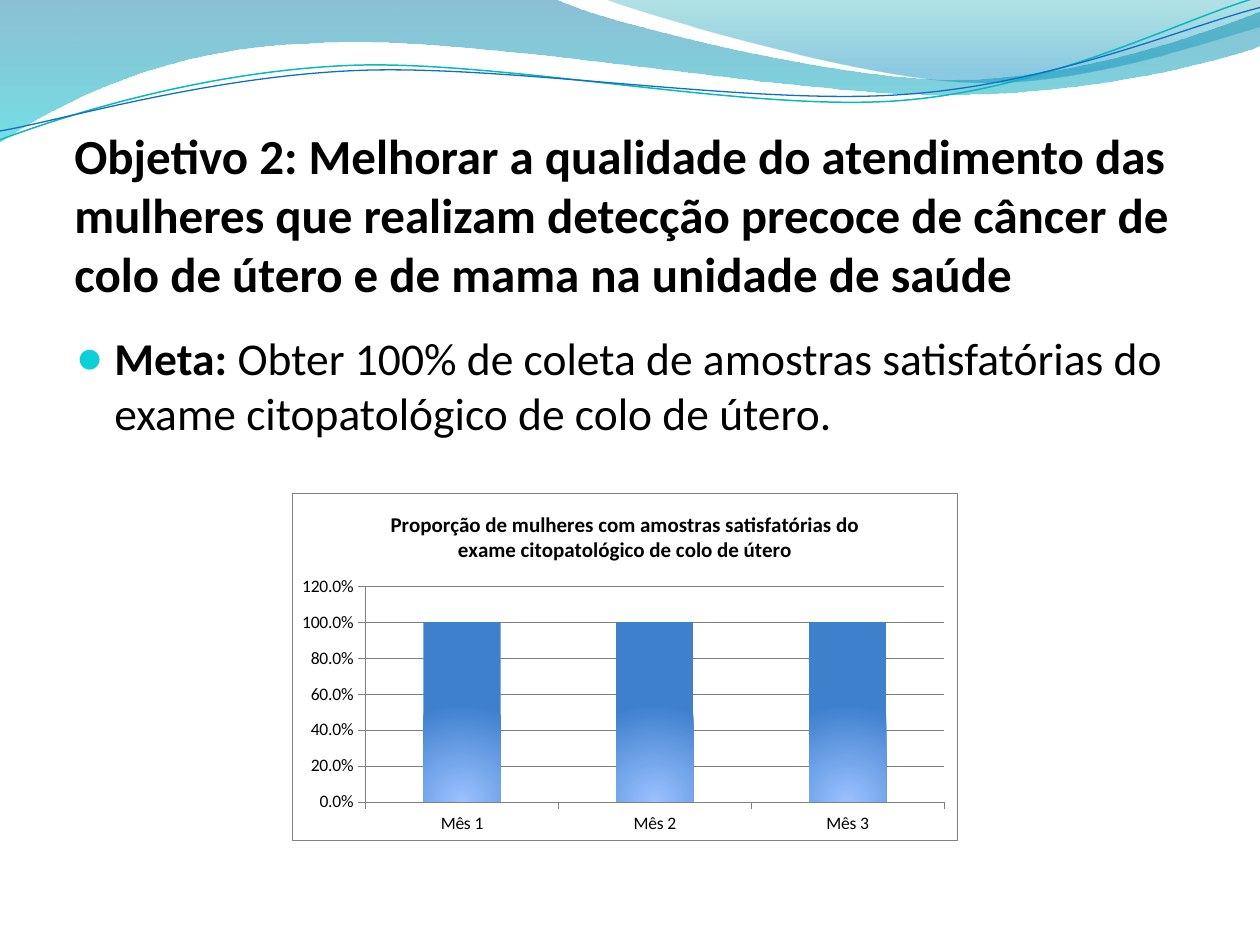
"""Build the slide on sample quality, with its wave header and column chart."""
import pptx
import pptx.chart.data
import pptx.dml.color
import pptx.enum.chart
import pptx.enum.text
import pptx.oxml
import pptx.oxml.ns
import pptx.util
from lxml import etree
from pptx.util import Inches

qn = pptx.oxml.ns.qn
Pt = pptx.util.Pt


def color(code):
    return pptx.dml.color.RGBColor.from_string(code)


def shade(fill, stops):
    fill.gradient()
    fill.gradient_angle = 270
    for stop, (place, code, alpha) in zip(fill.gradient_stops, stops):
        stop.position = place
        stop.color.rgb = color(code)
        if alpha < 100:
            tint = stop._gs.find(qn("a:srgbClr"))
            etree.SubElement(tint, qn("a:alpha"), val=str(alpha * 1000))


deck = pptx.Presentation()
deck.slide_width, deck.slide_height = Inches(10), Inches(7.5)
slide = deck.slides.add_slide(deck.slide_layouts[5])
slide.background.fill.solid()
slide.background.fill.fore_color.rgb = color("FFFFFF")

waves = [
    ("LCCLCCCL",
     [(0, 0), (4.4, -0.01), (4.76, 0.17), (6.64, 0.63), (7.58, 0.63),
      (8.53, 0.63), (9.58, 0.26), (10, 0.09), (10.01, 0.36),
      (9.83, 0.44), (8.7, 0.76), (7.46, 0.75), (6.22, 0.75), (3.82, 0.28),
      (2.57, 0.34), (1.29, 0.36), (0.46, 0.83), (-0.01, 1.13), (0, 0)],
     [(0, "0074A1", 45), (1, "00C6CF", 55)], None),
    ("CCLL",
     [(4.79, -0.01), (5.09, 0.11), (6.82, 0.62), (7.69, 0.65),
      (8.56, 0.69), (9.61, 0.32), (10, 0.21), (10, 0), (4.79, -0.01)],
     [(0, "00A1A9", 30), (0.8, "008BBF", 45)], None),
    ("CCC",
     [(0, 1.11), (0.48, 0.93), (1.58, 0.57), (2.77, 0.52), (3.95, 0.47),
      (5.93, 0.89), (7.13, 0.8), (8.33, 0.71), (9.38, 0.15), (9.98, -0.02)],
     None, ("0AB8BF", 0.85)),
    ("CCC",
     [(0, 1.04), (0.47, 0.96), (1.64, 0.61), (2.83, 0.56), (4.03, 0.51),
      (5.97, 0.84), (7.17, 0.75), (8.36, 0.67), (9.41, 0.21), (10, 0.06)],
     None, ("0F6FC6", 0.75)),
]
for kinds, points, stops, line in waves:
    spots = [(Inches(x), Inches(y)) for x, y in points]
    maker = slide.shapes.build_freeform(*spots[0])
    maker.add_line_segments(spots[1:], close=bool(stops))
    wave = maker.convert_to_shape()
    wave.shadow.inherit = False
    steps = iter(list(wave._element.iter(qn("a:lnTo"))))
    for kind in kinds:
        step = next(steps)
        if kind == "C":
            step.tag = qn("a:cubicBezTo")
            for extra in (next(steps), next(steps)):
                step.append(extra[0])
                extra.getparent().remove(extra)
    if stops:
        shade(wave.fill, stops)
        wave.line.fill.background()
    else:
        wave.fill.background()
        wave.line.color.rgb = color(line[0])
        wave.line.width = Pt(line[1])

title = slide.shapes.title
slide.shapes._spTree.append(title._element)
title.left, title.top = Inches(0.59), Inches(1.15)
title.width, title.height = Inches(9), Inches(1.25)
title.text = ("Objetivo 2: Melhorar a qualidade do atendimento das mulheres que "
              "realizam detecção precoce de câncer de colo de útero e de mama "
              "na unidade de saúde")
frame = title.text_frame
frame.auto_size = pptx.enum.text.MSO_AUTO_SIZE.NONE
frame.vertical_anchor = pptx.enum.text.MSO_ANCHOR.BOTTOM
frame.margin_left = frame.margin_right = frame.margin_bottom = 0
head = frame.paragraphs[0]
head.alignment = pptx.enum.text.PP_ALIGN.LEFT
head.font.bold = True

body = slide.shapes.add_textbox(Inches(0.51), Inches(2.57), Inches(9), Inches(4.48))
body.text_frame.word_wrap = True
goal = body.text_frame.paragraphs[0]
goal.space_before = Pt(5)
label = goal.add_run()
label.text = "Meta: "
label.font.bold = True
goal.add_run().text = ("Obter 100% de coleta de amostras satisfatórias do exame "
                       "citopatológico de colo de útero.")
for para, size in ((head, 28), (goal, 26)):
    para.font.name = "Calibri"
    para.font.size = Pt(size)
    para.font.color.rgb = color("000000")
props = goal._p.get_or_add_pPr()
props.set("marL", str(Inches(0.3)))
props.set("indent", str(Inches(-0.3)))
space = props.find(qn("a:spcBef"))
bullet = pptx.oxml.parse_xml(
    f'<a:pPr {pptx.oxml.ns.nsdecls("a")}>'
    '<a:buClr><a:srgbClr val="0BD0D9"/></a:buClr><a:buSzPct val="95000"/>'
    '<a:buFont typeface="Calibri"/><a:buChar char="●"/></a:pPr>')
for part in reversed(list(bullet)):
    space.addnext(part)

name = ("Proporção de mulheres com amostras satisfatórias do "
        "exame citopatológico de colo de útero")
data = pptx.chart.data.CategoryChartData(number_format="0.0%")
data.categories = ["Mês 1", "Mês 2", "Mês 3"]
data.add_series(name, [1, 1, 1])
chart = slide.shapes.add_chart(
    pptx.enum.chart.XL_CHART_TYPE.COLUMN_CLUSTERED,
    Inches(2.32), Inches(3.91), Inches(5.28), Inches(2.76), data).chart
chart.has_legend = False
chart.has_title = True
chart.chart_title.text_frame.text = name
chart.chart_title.include_in_layout = False
heading = chart.chart_title.text_frame.paragraphs[0].font
heading.bold = True
x_axis, y_axis = chart.category_axis, chart.value_axis
for font, size in ((chart.font, 10), (heading, 12),
                   (x_axis.tick_labels.font, 10), (y_axis.tick_labels.font, 10)):
    font.name = "Calibri"
    font.size = Pt(size)
    font.color.rgb = color("000000")
y_axis.minimum_scale, y_axis.maximum_scale, y_axis.major_unit = 0, 1.2, 0.2
y_axis.has_major_gridlines = True
y_axis.tick_labels.number_format = "0.0%"
y_axis.tick_labels.number_format_is_linked = False
for axis in (x_axis, y_axis):
    axis.major_tick_mark = pptx.enum.chart.XL_TICK_MARK.OUTSIDE
for line in (x_axis.format.line, y_axis.format.line,
             y_axis.major_gridlines.format.line):
    line.color.rgb = color("808080")
    line.width = Pt(0.25)

plot = chart.plots[0]
plot.gap_width = 150
plot.vary_by_categories = False
bars = plot.series[0]
bars.invert_if_negative = False
shade(bars.format.fill, [(0, "9BC1FF", 100), (1, "3F80CD", 100)])
slope = next(bars._element.iter(qn("a:lin")))
glow = etree.Element(qn("a:path"), attrib={"path": "circle"})
etree.SubElement(glow, qn("a:fillToRect"), l="50000", t="100000", r="50000")
slope.getparent().replace(slope, glow)

space = chart._chartSpace
area = next(space.iter(qn("c:plotArea")))
for old in area.findall(qn("c:layout")):
    area.remove(old)
spots = "".join(f'<c:{key} val="{val}"/>' for key, val in (
    ("layoutTarget", "inner"), ("xMode", "edge"), ("yMode", "edge"),
    ("x", 0.11), ("y", 0.27), ("w", 0.87), ("h", 0.62)))
area.insert(0, pptx.oxml.parse_xml(
    f'<c:layout {pptx.oxml.ns.nsdecls("c")}><c:manualLayout>{spots}'
    '</c:manualLayout></c:layout>'))
space.find(qn("c:chart")).addnext(pptx.oxml.parse_xml(
    f'<c:spPr {pptx.oxml.ns.nsdecls("c", "a")}>'
    '<a:solidFill><a:srgbClr val="FFFFFF"/></a:solidFill>'
    f'<a:ln w="{Pt(0.25)}"><a:solidFill><a:srgbClr val="808080"/></a:solidFill>'
    '</a:ln></c:spPr>'))

deck.save("out.pptx")
